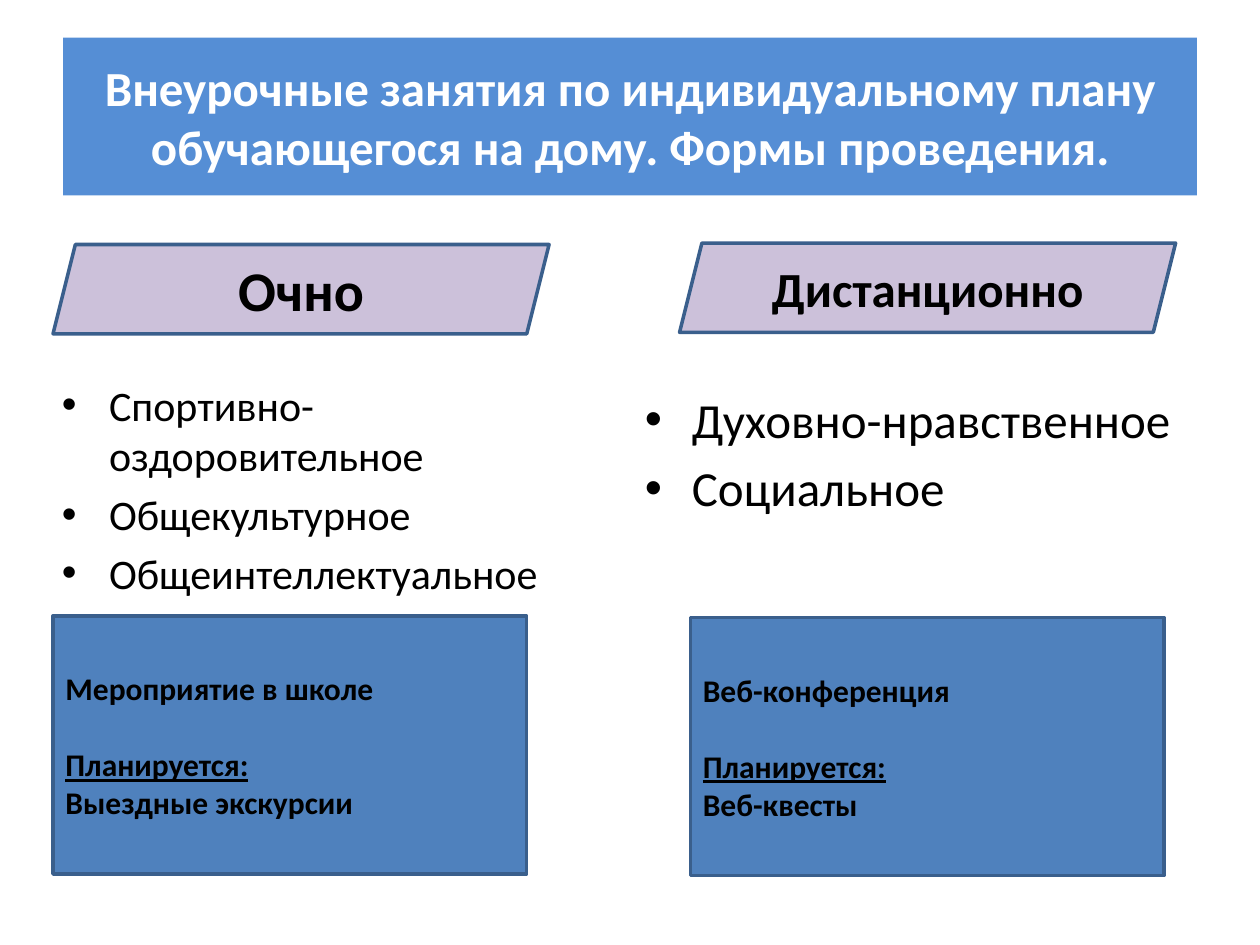
from lxml.etree import SubElement as Sub
from pptx import Presentation
from pptx.dml.color import RGBColor
from pptx.enum.shapes import MSO_SHAPE as Kind
from pptx.enum.text import MSO_ANCHOR as Anchor, MSO_AUTO_SIZE as Auto, PP_ALIGN as Align
from pptx.oxml.ns import qn
from pptx.util import Cm, Pt

WHITE = RGBColor(0xFF, 0xFF, 0xFF)
BLACK = RGBColor(0, 0, 0)
SKY = RGBColor(0x55, 0x8E, 0xD5)
BLUE = RGBColor(0x4F, 0x81, 0xBD)
NAVY = RGBColor(0x3A, 0x5F, 0x8C)
LILAC = RGBColor(0xCC, 0xC1, 0xDA)


class Deck:
    font = "Calibri"

    def __init__(self, wide, high):
        self.prs = Presentation()
        self.prs.slide_width, self.prs.slide_height = Cm(wide), Cm(high)
        self.slide = self.prs.slides.add_slide(self.prs.slide_layouts[5])

    def run(self, para, text, size, color=BLACK, bold=False, under=False):
        run = para.add_run()
        run.text = text
        font = run.font
        font.name, font.size, font.bold = self.font, Pt(size), bold
        font.underline = under
        font.color.rgb = color

    def lines(self, frame, count):
        return [frame.paragraphs[0]] + [frame.add_paragraph() for _ in range(count - 1)]

    def title(self, text, left, top, width, height):
        shape = self.slide.shapes.title
        shape.left, shape.top = Cm(left), Cm(top)
        shape.width, shape.height = Cm(width), Cm(height)
        shape.fill.solid()
        shape.fill.fore_color.rgb = SKY
        frame = shape.text_frame
        frame.auto_size = Auto.NONE
        frame.vertical_anchor = Anchor.MIDDLE
        para = frame.paragraphs[0]
        para.alignment = Align.CENTER
        self.run(para, text, 28, WHITE, True)

    def shape(self, kind, fill, left, top, width, height):
        shape = self.slide.shapes.add_shape(kind, Cm(left), Cm(top), Cm(width), Cm(height))
        shape.shadow.inherit = False
        shape.fill.solid()
        shape.fill.fore_color.rgb = fill
        shape.line.color.rgb = NAVY
        shape.line.width = Pt(2)
        frame = shape.text_frame
        frame.word_wrap = True
        frame.vertical_anchor = Anchor.MIDDLE
        return frame

    def head(self, text, size, left, top):
        frame = self.shape(Kind.PARALLELOGRAM, LILAC, left, top, 10, 1.8)
        frame.margin_top = frame.margin_bottom = 0
        para = frame.paragraphs[0]
        para.alignment = Align.CENTER
        self.run(para, text, size, bold=True)

    def bullets(self, items, size, left, top, height):
        box = self.slide.shapes.add_textbox(Cm(left), Cm(top), Cm(11.23), Cm(height))
        frame = box.text_frame
        frame.word_wrap = True
        for para, text in zip(self.lines(frame, len(items)), items):
            para.space_before = Pt(size * 0.2)
            props = para._p.get_or_add_pPr()
            props.set("marL", str(Cm(0.95)))
            props.set("indent", str(-Cm(0.95)))
            Sub(props, qn("a:buFont")).set("typeface", "Arial")
            Sub(props, qn("a:buChar")).set("char", "•")
            self.run(para, text, size)

    def plan(self, now, later, left, top):
        frame = self.shape(Kind.RECTANGLE, BLUE, left, top, 9.55, 5.2)
        paras = self.lines(frame, 3)
        paras[1].space_before = Pt(22)
        for para, text in zip(paras, (now, "Планируется:", later)):
            para.alignment = Align.LEFT
            self.run(para, text, 18, bold=True, under=para is paras[1])

    def save(self):
        self.prs.save("out.pptx")


def main():
    deck = Deck(25.4, 19.05)
    deck.title("Внеурочные занятия по индивидуальному плану обучающегося на дому. "
               "Формы проведения.", 1.27, 0.76, 22.86, 3.18)
    deck.bullets(["Спортивно-оздоровительное", "Общекультурное", "Общеинтеллектуальное"],
                 24, 1, 7.52, 4.6)
    deck.bullets(["Духовно-нравственное", "Социальное"], 28, 12.75, 7.72, 3)
    deck.head("Очно", 32, 1.07, 4.93)
    deck.head("Дистанционно", 28, 13.7, 4.9)
    deck.plan("Мероприятие в школе", "Выездные экскурсии", 1.07, 12.42)
    deck.plan("Веб-конференция", "Веб-квесты", 13.92, 12.45)
    deck.save()


if __name__ == "__main__":
    main()
